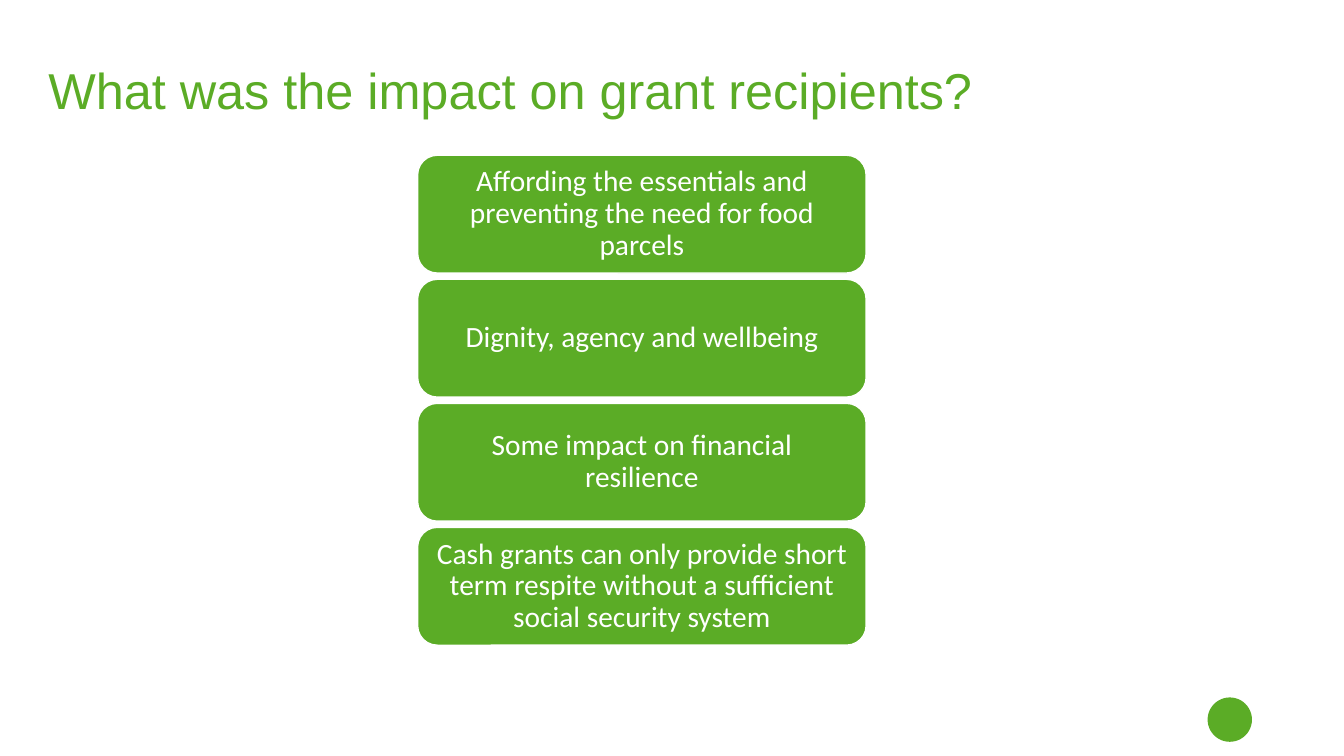
from dataclasses import dataclass

from pptx import Presentation
from pptx.dml.color import RGBColor
from pptx.enum.shapes import MSO_SHAPE as Preset
from pptx.enum.text import MSO_ANCHOR as Anchor, PP_ALIGN as Align
from pptx.shapes.autoshape import Shape
from pptx.slide import Slide
from pptx.util import Pt


@dataclass(frozen=True)
class Theme:
    """Colours, fonts and type sizes."""
    green: RGBColor = RGBColor(0x5B, 0xAC, 0x26)
    white: RGBColor = RGBColor(0xFF, 0xFF, 0xFF)
    title_font: str = "Arial"
    card_font: str = "Calibri"
    title_size: float = 36
    card_size: float = 21


@dataclass(frozen=True)
class Frame:
    """Position and size in points."""
    left: float
    top: float
    width: float
    height: float

    def lengths(self) -> tuple[Pt, Pt, Pt, Pt]:
        """Return the frame as lengths."""
        return Pt(self.left), Pt(self.top), Pt(self.width), Pt(self.height)


THEME = Theme()
TITLE = "What was the impact on grant recipients?"
TITLE_FRAME = Frame(27.4, 43.9, 906.5, 104.4)
FIRST_CARD = Frame(298.3, 110.9, 320.4, 84.2)
CARD_PITCH = 88.6
BADGE_FRAME = Frame(862.6, 498.2, 31.7, 31.7)
IMPACTS = [
    "Affording the essentials and preventing the need for food parcels",
    "Dignity, agency and wellbeing",
    "Some impact on financial resilience",
    "Cash grants can only provide short term respite without a sufficient social security system",
]


def write(holder: Shape, text: str, *, font: str, size: float, color: RGBColor,
          align: Align = Align.LEFT, anchor: Anchor = Anchor.TOP,
          inset_x: float = 7.2, inset_y: float = 3.6) -> None:
    """Write formatted text into a shape."""
    frame = holder.text_frame
    frame.word_wrap = True
    frame.vertical_anchor = anchor
    frame.margin_left = frame.margin_right = Pt(inset_x)
    frame.margin_top = frame.margin_bottom = Pt(inset_y)
    paragraph = frame.paragraphs[0]
    paragraph.text = text
    paragraph.alignment = align
    paragraph.line_spacing = 0.9
    paragraph.font.name = font
    paragraph.font.size = Pt(size)
    paragraph.font.color.rgb = color


def add_green_shape(slide: Slide, preset: Preset, frame: Frame) -> Shape:
    """Add a flat green shape without an outline."""
    shape = slide.shapes.add_shape(preset, *frame.lengths())
    shape.shadow.inherit = False
    shape.fill.solid()
    shape.fill.fore_color.rgb = THEME.green
    shape.line.fill.background()
    return shape


def add_card(slide: Slide, position: int, impact: str) -> None:
    """Add one impact card at its place in the stack."""
    frame = Frame(FIRST_CARD.left, FIRST_CARD.top + position * CARD_PITCH,
                  FIRST_CARD.width, FIRST_CARD.height)
    card = add_green_shape(slide, Preset.ROUNDED_RECTANGLE, frame)
    card.line.color.rgb = THEME.white
    card.line.width = Pt(1)
    write(card, impact, font=THEME.card_font, size=THEME.card_size,
          color=THEME.white, align=Align.CENTER, anchor=Anchor.MIDDLE,
          inset_x=6.3, inset_y=3.15)


def main() -> None:
    """Build and save the slide."""
    deck = Presentation()
    deck.slide_width, deck.slide_height = Pt(960), Pt(540)
    slide = deck.slides.add_slide(deck.slide_layouts[6])
    add_green_shape(slide, Preset.OVAL, BADGE_FRAME)
    title = slide.shapes.add_textbox(*TITLE_FRAME.lengths())
    write(title, TITLE, font=THEME.title_font, size=THEME.title_size, color=THEME.green)
    for position, impact in enumerate(IMPACTS):
        add_card(slide, position, impact)
    deck.save("out.pptx")


if __name__ == "__main__":
    main()
